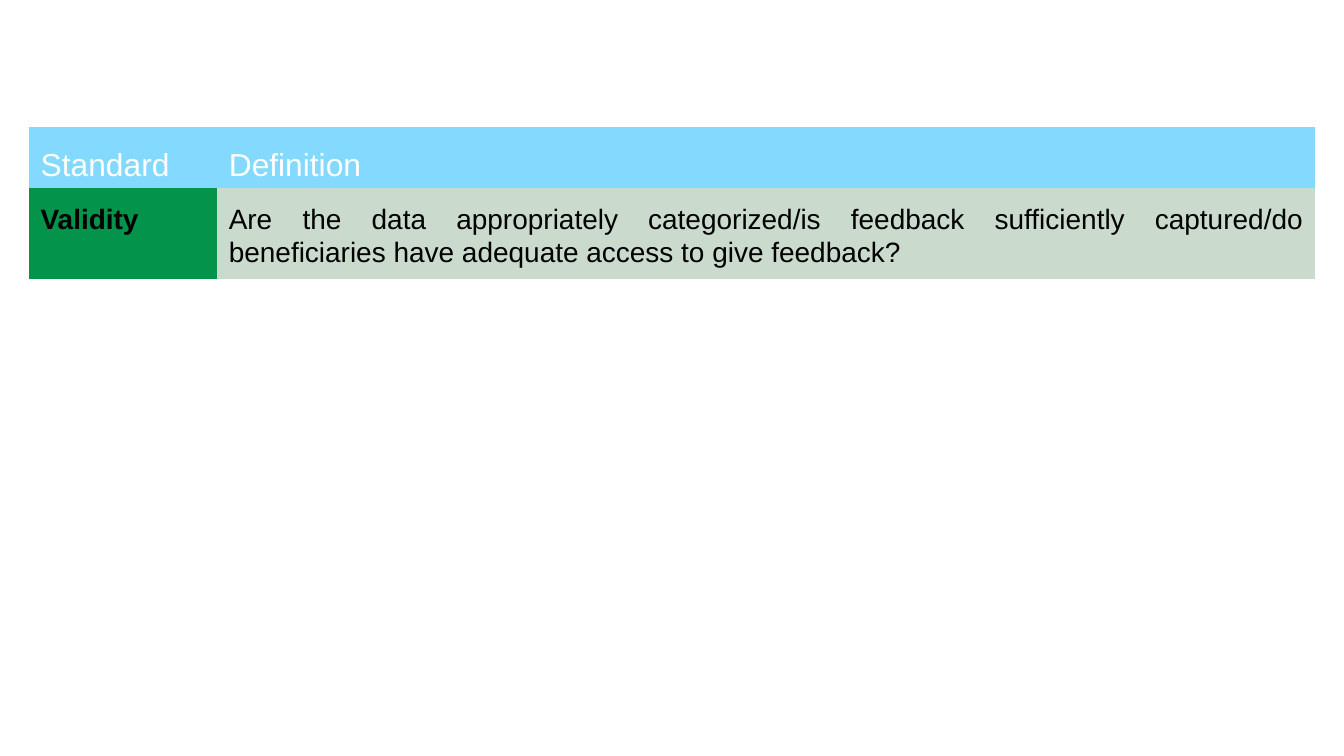
from dataclasses import dataclass

from pptx import Presentation
from pptx.dml.color import RGBColor
from pptx.enum.text import MSO_ANCHOR, PP_ALIGN
from pptx.util import Pt


@dataclass
class CellStyle:
    fill: str
    color: str
    size: float
    bold: bool
    anchor: MSO_ANCHOR


HEADER = CellStyle("84D9FF", "FFFFFF", 17, False, MSO_ANCHOR.MIDDLE)
NAME = CellStyle("04934A", "000000", 15, True, MSO_ANCHOR.TOP)
DEFINITION = CellStyle("CADBCE", "000000", 15, False, MSO_ANCHOR.TOP)

COL_WIDTHS = [100.8, 588.24]
ROW_HEIGHTS = [32.6, 48.9]
ROWS = [
    [("Standard", HEADER), ("Definition", HEADER)],
    [
        ("Validity", NAME),
        (
            "Are the data appropriately categorized/is feedback sufficiently "
            "captured/do beneficiaries have adequate access to give feedback?",
            DEFINITION,
        ),
    ],
]


def rgb(value: str) -> RGBColor:
    return RGBColor.from_string(value)


def set_attrs(target, values: dict) -> None:
    for name, value in values.items():
        setattr(target, name, value)


def fill_cell(cell, text: str, style: CellStyle) -> None:
    cell.fill.solid()
    cell.fill.fore_color.rgb = rgb(style.fill)
    set_attrs(cell, {
        "margin_left": Pt(6.2),
        "margin_right": Pt(6.2),
        "margin_top": Pt(7.7),
        "margin_bottom": Pt(0),
        "vertical_anchor": style.anchor,
    })
    p = cell.text_frame.paragraphs[0]
    set_attrs(p, {"alignment": PP_ALIGN.JUSTIFY, "line_spacing": 1.06})
    r = p.add_run()
    r.text = text
    set_attrs(r.font, {"name": "Arial", "size": Pt(style.size), "bold": style.bold})
    r.font.color.rgb = rgb(style.color)


def add_standards_table(s) -> None:
    table = s.shapes.add_table(
        len(ROWS), len(COL_WIDTHS), Pt(15.6), Pt(68.1),
        Pt(sum(COL_WIDTHS)), Pt(sum(ROW_HEIGHTS)),
    ).table
    set_attrs(table, {"first_row": False, "horz_banding": False})
    for column, width in zip(table.columns, COL_WIDTHS):
        column.width = Pt(width)
    for row, height, entries in zip(table.rows, ROW_HEIGHTS, ROWS):
        row.height = Pt(height)
        for cell, (text, style) in zip(row.cells, entries):
            fill_cell(cell, text, style)
    style_id = table._tbl.tblPr.find(
        "{http://schemas.openxmlformats.org/drawingml/2006/main}tableStyleId"
    )
    style_id.text = "{2D5ABB26-0587-4C30-8999-92F81FD0307C}"


def main() -> None:
    prs = Presentation()
    set_attrs(prs, {"slide_width": Pt(720), "slide_height": Pt(405)})
    s = prs.slides.add_slide(prs.slide_layouts[6])
    add_standards_table(s)
    prs.save("out.pptx")


if __name__ == "__main__":
    main()
